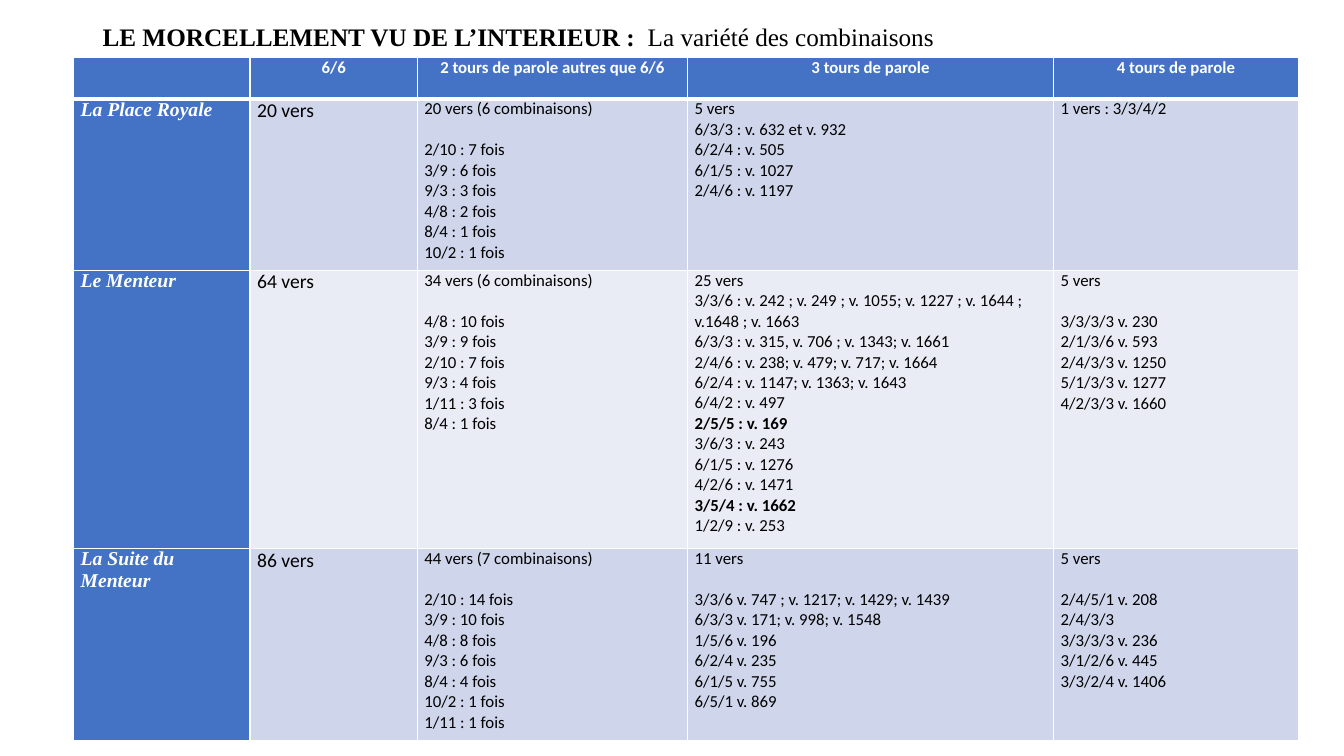
"""Build a slide with a table of verse divisions in three plays."""
from lxml.etree import SubElement
from pptx import Presentation
from pptx.dml.color import RGBColor
from pptx.enum.text import MSO_AUTO_SIZE, PP_ALIGN
from pptx.oxml.ns import qn
from pptx.util import Inches, Pt

COLORS = {"white": "FFFFFF", "black": "000000", "blue": "4472C4",
          "band": "CFD5EA", "light": "E9EBF5"}
SERIF, SANS = "Times New Roman", "Calibri"
WIDTH, HEIGHT = Inches(13.33), Inches(7.5)
COLUMN_PERCENTS = [13.13, 12.45, 20.11, 27.23, 18.23]
ROW_PERCENTS = [5.47, 22.67, 36.8, 25.47]
BLOCK_GAP = 14.65

HEADER = ["", "6/6", "2 tours de parole autres que 6/6", "3 tours de parole", "4 tours de parole"]
PLAYS = [
    ["La Place Royale", "20 vers",
     """20 vers (6 combinaisons)

2/10 : 7 fois
3/9 : 6 fois
9/3 : 3 fois
4/8 : 2 fois
8/4 : 1 fois
10/2 : 1 fois""",
     """5 vers
6/3/3 : v. 632 et v. 932
6/2/4 : v. 505
6/1/5 : v. 1027
2/4/6 : v. 1197""",
     "1 vers : 3/3/4/2"],
    ["Le Menteur", "64 vers",
     """34 vers (6 combinaisons)

4/8 : 10 fois
3/9 : 9 fois
2/10 : 7 fois
9/3 : 4 fois
1/11 : 3 fois
8/4 : 1 fois""",
     """25 vers
3/3/6 : v. 242 ; v. 249 ; v. 1055; v. 1227 ; v. 1644 ; v.1648 ; v. 1663
6/3/3 : v. 315, v. 706 ; v. 1343; v. 1661
2/4/6 : v. 238; v. 479; v. 717; v. 1664
6/2/4 : v. 1147; v. 1363; v. 1643
6/4/2 : v. 497
*2/5/5 : v. 169
3/6/3 : v. 243
6/1/5 : v. 1276
4/2/6 : v. 1471
*3/5/4 : v. 1662
1/2/9 : v. 253""",
     """5 vers

3/3/3/3 v. 230
2/1/3/6 v. 593
2/4/3/3 v. 1250
5/1/3/3 v. 1277
4/2/3/3 v. 1660"""],
    ["La Suite du Menteur", "86 vers",
     """44 vers (7 combinaisons)

2/10 : 14 fois
3/9 : 10 fois
4/8 : 8 fois
9/3 : 6 fois
8/4 : 4 fois
10/2 : 1 fois
1/11 : 1 fois""",
     """11 vers

3/3/6 v. 747 ; v. 1217; v. 1429; v. 1439
6/3/3 v. 171; v. 998; v. 1548
1/5/6 v. 196
6/2/4 v. 235
6/1/5 v. 755
6/5/1 v. 869""",
     """5 vers

2/4/5/1 v. 208
2/4/3/3
3/3/3/3 v. 236
3/1/2/6 v. 445
3/3/2/4 v. 1406"""],
]


def across(percent):
    """Return a percentage of the slide's width."""
    return int(WIDTH * percent / 100)


def down(percent):
    """Return a percentage of the slide's height."""
    return int(HEIGHT * percent / 100)


def add_run(paragraph, text, size=12, font=SANS, color="black", bold=False, italic=False):
    """Add one formatted run to a paragraph."""
    run = paragraph.add_run()
    run.text = text
    run.font.size, run.font.name = Pt(size), font
    run.font.bold, run.font.italic = bold, italic
    run.font.color.rgb = RGBColor.from_string(COLORS[color])


def write_text(text_frame, text, align=PP_ALIGN.LEFT, bold=False, **style):
    """Write lines as paragraphs, with a gap between blocks and starred lines in bold."""
    paragraph = None
    for block in text.split("\n\n"):
        if paragraph is not None:
            paragraph.space_after = Pt(BLOCK_GAP)
        for line in block.split("\n"):
            paragraph = text_frame.paragraphs[0] if paragraph is None else text_frame.add_paragraph()
            paragraph.alignment = align
            add_run(paragraph, line.lstrip("*"), bold=bold or line.startswith("*"), **style)


def set_borders(cell, bottom):
    """Draw white borders around a cell."""
    properties = cell._tc.get_or_add_tcPr()
    widths = {"a:lnL": 1, "a:lnR": 1, "a:lnT": 1, "a:lnB": bottom}
    for position, (tag, width) in enumerate(widths.items()):
        line = SubElement(properties, qn(tag), w=str(Pt(width)))
        SubElement(SubElement(line, qn("a:solidFill")), qn("a:srgbClr"), val=COLORS["white"])
        properties.insert(position, line)


def fill_cell(cell, text, fill, bottom=1, **style):
    """Give a cell its fill, margins, borders and text."""
    cell.fill.solid()
    cell.fill.fore_color.rgb = RGBColor.from_string(COLORS[fill])
    cell.margin_left = cell.margin_right = Inches(0.07)
    cell.margin_top = cell.margin_bottom = 0
    set_borders(cell, bottom)
    if text:
        write_text(cell.text_frame, text, **style)


def add_verse_table(slide):
    """Add the table of plays and turns of speech."""
    frame = slide.shapes.add_table(
        len(ROW_PERCENTS), len(COLUMN_PERCENTS), across(5.48), down(7.6),
        across(sum(COLUMN_PERCENTS)), down(sum(ROW_PERCENTS)))
    table = frame.table
    for column, percent in zip(table.columns, COLUMN_PERCENTS):
        column.width = across(percent)
    for row, percent in zip(table.rows, ROW_PERCENTS):
        row.height = down(percent)
    for column, heading in enumerate(HEADER):
        fill_cell(table.cell(0, column), heading, "blue", bottom=3,
                  align=PP_ALIGN.CENTER, color="white", bold=True)
    for row, (play, halves, *details) in enumerate(PLAYS, start=1):
        band = "band" if row % 2 else "light"
        fill_cell(table.cell(row, 0), play, "blue", size=14, font=SERIF,
                  color="white", bold=True, italic=True)
        fill_cell(table.cell(row, 1), halves, band, size=14)
        for column, detail in enumerate(details, start=2):
            fill_cell(table.cell(row, column), detail, band)


def add_title(slide):
    """Add the slide's heading in bold and regular type."""
    box = slide.shapes.add_textbox(across(6.9), down(2.13), across(66.17), down(5.33))
    box.text_frame.word_wrap = False
    box.text_frame.auto_size = MSO_AUTO_SIZE.SHAPE_TO_FIT_TEXT
    write_text(box.text_frame, "LE MORCELLEMENT VU DE L’INTERIEUR : ", size=18, font=SERIF, bold=True)
    add_run(box.text_frame.paragraphs[0], " La variété des combinaisons", size=18, font=SERIF)


def main():
    """Build and save the presentation."""
    presentation = Presentation()
    presentation.slide_width, presentation.slide_height = WIDTH, HEIGHT
    slide = presentation.slides.add_slide(presentation.slide_layouts[6])
    add_verse_table(slide)
    add_title(slide)
    presentation.save("out.pptx")


if __name__ == "__main__":
    main()
